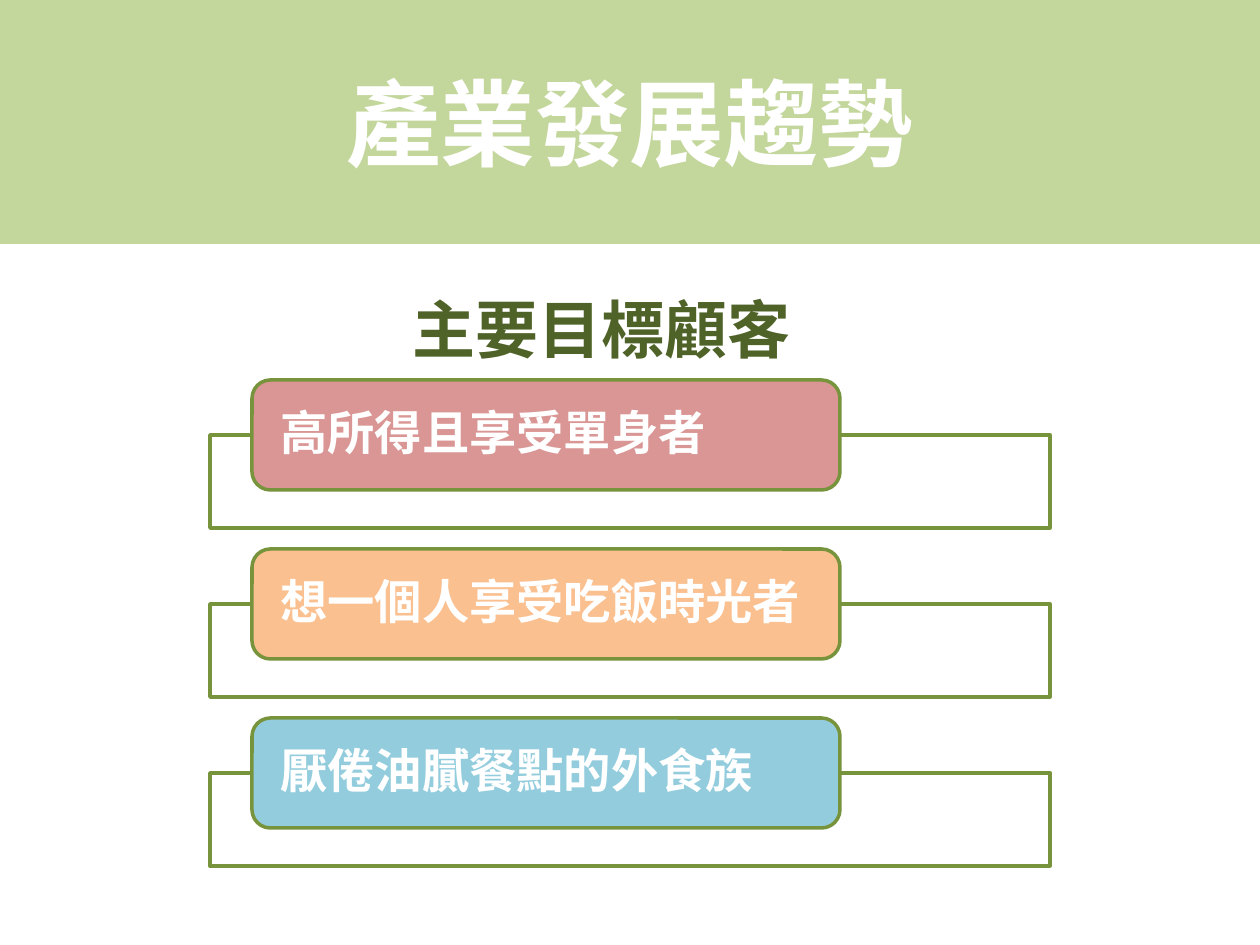
from lxml import etree
from pptx import Presentation, util as u
from pptx.dml.color import RGBColor
from pptx.enum import shapes, text
from pptx.oxml.ns import qn

PX = 914400 // 126
FONT = "Noto Sans CJK SC"
GREEN = "77933C"
PITCH = 169
CUSTOMERS = [
    ("高所得且享受單身者", "D99694"),
    ("想一個人享受吃飯時光者", "FAC090"),
    ("厭倦油膩餐點的外食族", "93CDDD"),
]


def box(*lengths):
    return [u.Emu(n * PX) for n in lengths]


def color(value):
    return RGBColor.from_string(value)


def add_box(slide, kind, at, fill, line=None):
    s = slide.shapes.add_shape(kind, *box(*at))
    s.shadow.inherit = False
    s.fill.solid()
    s.fill.fore_color.rgb = color(fill)
    if line:
        s.line.color.rgb = color(line)
        s.line.width = u.Pt(2)
    else:
        s.line.fill.background()
    return s


def set_alpha(s, percent):
    rgb = s.fill._xPr.find(qn("a:solidFill"))[0]
    etree.SubElement(rgb, qn("a:alpha")).set("val", str(percent * 1000))


def write(s, words, size, ink, align, **frame):
    tf = s.text_frame
    for name, value in {"word_wrap": True, **frame}.items():
        setattr(tf, name, value)
    p = tf.paragraphs[0]
    p.alignment = align
    r = p.add_run()
    r.text = words
    for name, value in {"name": FONT, "size": u.Pt(size), "bold": True}.items():
        setattr(r.font, name, value)
    r.font.color.rgb = color(ink)
    etree.SubElement(r._r.get_or_add_rPr(), qn("a:ea")).set("typeface", FONT)
    return p


def add_customer(slide, top, words, fill):
    frame = add_box(slide, shapes.MSO_SHAPE.RECTANGLE,
                    (210, top + 55, 840, 93), "FFFFFF", GREEN)
    set_alpha(frame, 90)
    tab = add_box(slide, shapes.MSO_SHAPE.ROUNDED_RECTANGLE,
                  (252, top, 588, 110), fill, GREEN)
    side = u.Emu(23 * PX)
    p = write(tab, words, 27, "FFFFFF", text.PP_ALIGN.LEFT,
              vertical_anchor=text.MSO_ANCHOR.MIDDLE,
              margin_left=side, margin_right=side, margin_top=0, margin_bottom=0)
    p.line_spacing = 0.9


def main():
    prs = Presentation()
    prs.slide_width, prs.slide_height = box(1260, 945)
    slide = prs.slides.add_slide(prs.slide_layouts[6])

    banner = add_box(slide, shapes.MSO_SHAPE.RECTANGLE, (0, 0, 1260, 244), "C3D69B")
    write(banner, "產業發展趨勢", 54, "FFFFFF", text.PP_ALIGN.CENTER,
          vertical_anchor=text.MSO_ANCHOR.MIDDLE)

    for i, (words, fill) in enumerate(CUSTOMERS):
        add_customer(slide, 380 + i * PITCH, words, fill)

    heading = slide.shapes.add_textbox(*box(194, 284, 814, 89))
    write(heading, "主要目標顧客", 36, "4F6228", text.PP_ALIGN.CENTER,
          auto_size=text.MSO_AUTO_SIZE.SHAPE_TO_FIT_TEXT)

    prs.save("out.pptx")


if __name__ == "__main__":
    main()
